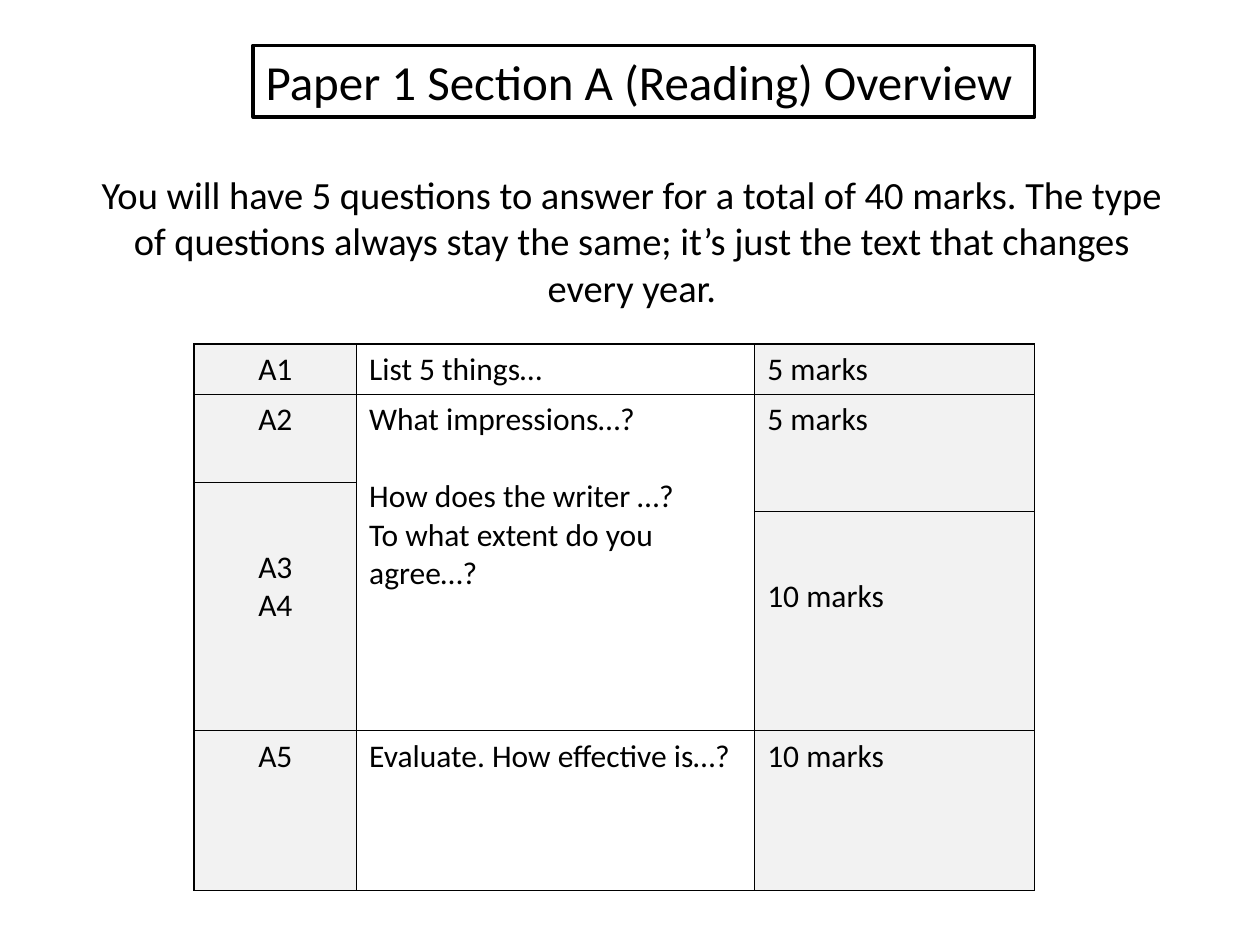
from lxml.etree import SubElement
from pptx import Presentation
from pptx.dml.color import RGBColor
from pptx.enum.shapes import MSO_SHAPE
from pptx.enum.text import PP_ALIGN
from pptx.oxml.ns import qn
from pptx.util import Inches, Pt


def rgb(value):
    return RGBColor.from_string(value)


def write(tf, lines, size, align=PP_ALIGN.LEFT):
    for i, line in enumerate(lines):
        p = tf.paragraphs[0] if i == 0 else tf.add_paragraph()
        p.text = line
        p.alignment = align
        p.font.name = "Calibri"
        p.font.size = Pt(size)
        p.font.color.rgb = rgb("000000")


prs = Presentation()
prs.slide_width, prs.slide_height = Inches(10), Inches(7.5)
s = prs.slides.add_slide(prs.slide_layouts[6])

title = s.shapes.add_shape(MSO_SHAPE.RECTANGLE, Inches(2.01), Inches(0.36),
                           Inches(6.2), Inches(0.57))
title.shadow.inherit = False
title.fill.solid()
title.fill.fore_color.rgb = rgb("FFFFFF")
title.line.color.rgb = rgb("000000")
title.line.width = Pt(2)
title.text_frame.word_wrap = False
write(title.text_frame, ["Paper 1 Section A (Reading) Overview"], 28)

intro = s.shapes.add_textbox(Inches(0.59), Inches(1.31), Inches(8.85), Inches(1.21))
intro.text_frame.word_wrap = True
write(intro.text_frame, [
    "You will have 5 questions to answer for a total of 40 marks. The type of "
    "questions always stay the same; it’s just the text that changes every year."
], 22, PP_ALIGN.CENTER)

widths = [1.29, 3.16, 2.22]
heights = [0.4, 0.7, 0.23, 0.24, 0.23, 1.27, 1.27]
table = s.shapes.add_table(len(heights), len(widths), Inches(1.54), Inches(2.73),
                           Inches(sum(widths)), Inches(sum(heights))).table
table.first_row = table.horz_banding = False
for column, width in zip(table.columns, widths):
    column.width = Inches(width)
for row, height in zip(table.rows, heights):
    row.height = Inches(height)

# First row, column, rows spanned, paragraphs, sides without a border
blocks = [
    (0, 0, 1, ["A1"], ""),
    (0, 1, 1, ["List 5 things…"], ""),
    (0, 2, 1, ["5 marks"], ""),
    (1, 0, 1, ["A2"], ""),
    (1, 1, 5, ["What impressions…?", "How does the writer …?",
               "To what extent do you agree…?"], ""),
    (1, 2, 2, ["5 marks"], ""),
    (2, 0, 2, [], "B"),
    (3, 2, 2, [], "B"),
    (4, 0, 2, ["A3", "A4"], "T"),
    (5, 2, 1, ["10 marks"], "T"),
    (6, 0, 1, ["A5"], ""),
    (6, 1, 1, ["Evaluate. How effective is…?"], ""),
    (6, 2, 1, ["10 marks"], ""),
]
for top, col, span, lines, open_sides in blocks:
    bottom = top + span - 1
    cell = table.cell(top, col)
    if span > 1:
        cell.merge(table.cell(bottom, col))
    for row in range(top, bottom + 1):
        part = table.cell(row, col)
        tcPr = part._tc.get_or_add_tcPr()
        for side in "LRTB":
            inner = (side == "T" and row > top) or (side == "B" and row < bottom)
            ln = SubElement(tcPr, qn(f"a:ln{side}"), w=str(Pt(1)))
            if inner or side in open_sides:
                SubElement(ln, qn("a:noFill"))
            else:
                fill = SubElement(ln, qn("a:solidFill"))
                SubElement(fill, qn("a:srgbClr"), val="000000")
        part.fill.solid()
        part.fill.fore_color.rgb = rgb("FFFFFF" if col == 1 else "F2F2F2")
    if lines:
        write(cell.text_frame, lines, 18, PP_ALIGN.CENTER if col == 0 else PP_ALIGN.LEFT)
    else:
        cell.margin_top = cell.margin_bottom = 0
        cell.text_frame.paragraphs[0].font.size = Pt(8)

# One line of space between the first two questions
table.cell(1, 1).text_frame.paragraphs[0].space_after = Pt(22)

prs.save("out.pptx")
